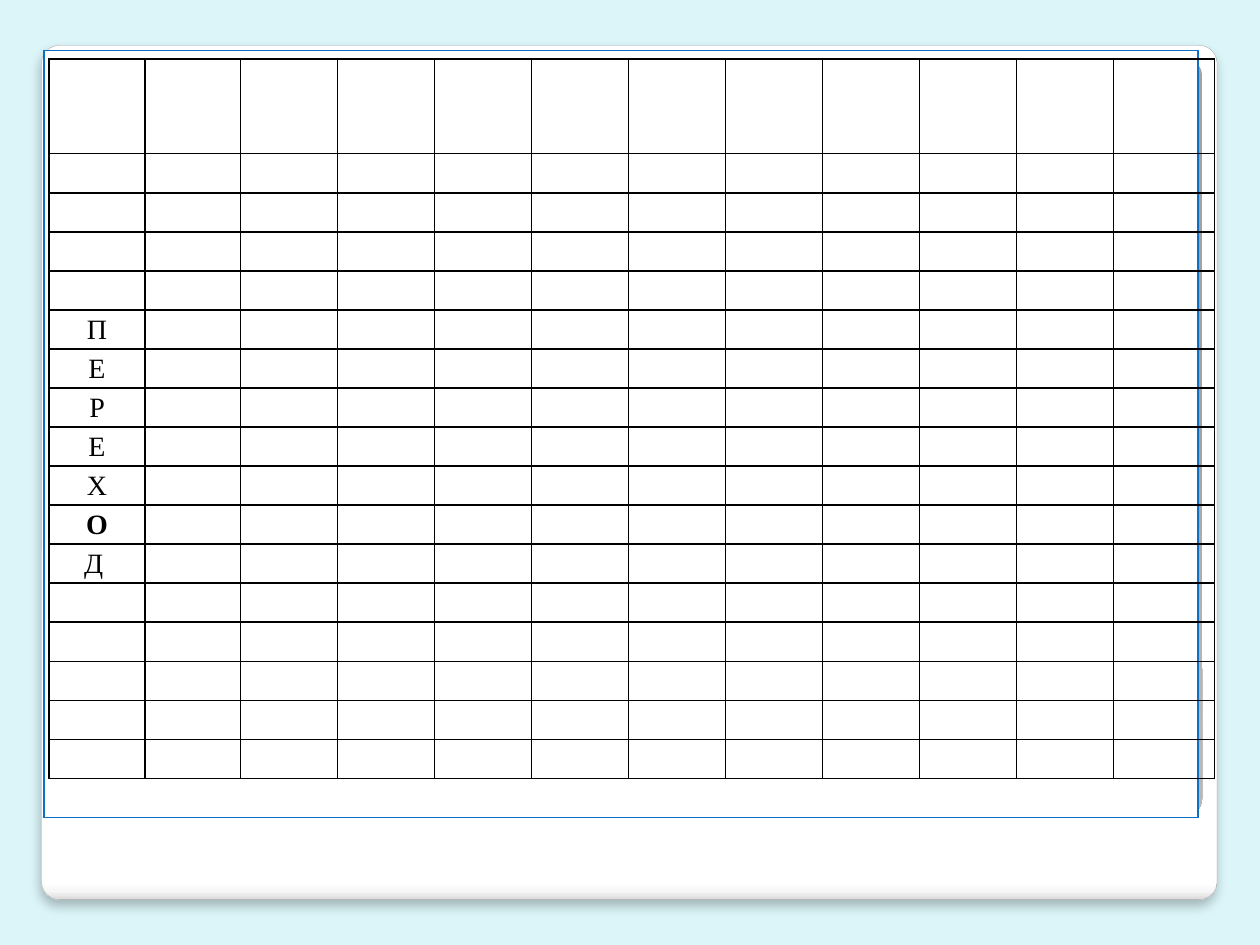
from lxml import etree
from pptx import Presentation
from pptx.dml.color import RGBColor
from pptx.enum import shapes, text
from pptx.oxml import parse_xml
from pptx.oxml.ns import nsdecls, qn
from pptx.util import Inches, Pt

PALE_CYAN = RGBColor(0xDB, 0xF5, 0xF9)
WHITE = RGBColor(0xFF, 0xFF, 0xFF)
GRAY = RGBColor(0xA4, 0xA4, 0xA4)
BLUE = RGBColor(0x0F, 0x6F, 0xC6)
BLACK = RGBColor(0, 0, 0)


def add_panel(slide, left, top, width, height, stops, direction):
    """Add a rounded panel with a gradient of (percent, colour) stops."""
    panel = slide.shapes.add_shape(
        shapes.MSO_SHAPE.ROUNDED_RECTANGLE,
        Inches(left), Inches(top), Inches(width), Inches(height))
    panel.adjustments[0] = 0.021
    panel.shadow.inherit = False
    panel.line.fill.background()
    stop_xml = "".join(
        f'<a:gs pos="{position * 1000}"><a:srgbClr val="{color}"/></a:gs>'
        for position, color in stops)
    gradient = parse_xml(
        f'<a:gradFill {nsdecls("a")} rotWithShape="1">'
        f'<a:gsLst>{stop_xml}</a:gsLst>{direction}</a:gradFill>')
    panel._element.spPr.find(qn("a:prstGeom")).addnext(gradient)
    return panel


def add_grid(slide, left, top, columns, rows, border):
    """Add a plain table with 1 pt borders and no cell fill."""
    table = slide.shapes.add_table(
        len(rows), len(columns), Inches(left), Inches(top),
        Inches(sum(columns)), Inches(sum(rows))).table
    table.first_row = table.horz_banding = False
    for column, width in zip(table.columns, columns):
        column.width = Inches(width)
    for row, height in zip(table.rows, rows):
        row.height = Inches(height)
    for cell in table.iter_cells():
        cell.margin_left = cell.margin_right = Inches(0.07)
        cell.margin_top = cell.margin_bottom = 0
        properties = cell._tc.get_or_add_tcPr()
        for side in ("lnL", "lnR", "lnT", "lnB"):
            line = etree.SubElement(properties, qn(f"a:{side}"), w=str(Pt(1)))
            fill = etree.SubElement(line, qn("a:solidFill"))
            etree.SubElement(fill, qn("a:srgbClr"), val=str(border))
        cell.fill.background()
    return table


presentation = Presentation()
presentation.slide_width = Inches(10)
presentation.slide_height = Inches(7.5)
slide = presentation.slides.add_slide(presentation.slide_layouts[6])
slide.background.fill.solid()
slide.background.fill.fore_color.rgb = PALE_CYAN

# White card with a soft shadow
card = add_panel(
    slide, 0.33, 0.36, 9.33, 6.78,
    [(0, "FFFFFF"), (98, "FFFFFF"), (99, "F7F7F7"), (100, "DADADA")],
    '<a:lin ang="5400000" scaled="0"/>')
card.line.color.rgb = GRAY
card.line.width = Pt(0.16)
card._element.spPr.find(qn("a:effectLst")).append(parse_xml(
    f'<a:outerShdw {nsdecls("a")} blurRad="{Pt(6)}" dist="{Pt(4)}" '
    'dir="5400000" algn="t" rotWithShape="0">'
    '<a:srgbClr val="000000"><a:alpha val="25000"/></a:srgbClr></a:outerShdw>'))

# Gray inner panel
add_panel(
    slide, 0.46, 0.47, 9.08, 6,
    [(0, "FFFFFF"), (55, "E1E1E1"), (100, "A2A2A2")],
    '<a:path path="circle">'
    '<a:fillToRect l="50000" t="175000" r="50000" b="-75000"/></a:path>')

# White frame behind the crossword
frame = add_grid(slide, 0.35, 0.4, [9.16], [6.09], BLUE)
frame.cell(0, 0).fill.solid()
frame.cell(0, 0).fill.fore_color.rgb = WHITE

# Crossword grid with the key word down the first column
crossword = add_grid(
    slide, 0.39, 0.47, [0.76] * 2 + [0.77] * 9 + [0.8],
    [0.75] + [0.31] * 16, BLACK)
for row, letter in enumerate(["П", "Е", "Р", "Е", "Х", "О", "Д "], start=5):
    paragraph = crossword.cell(row, 0).text_frame.paragraphs[0]
    paragraph.text = letter
    paragraph.alignment = text.PP_ALIGN.CENTER
    paragraph.line_spacing = 1.15
    paragraph.font.name = "Times New Roman"
    paragraph.font.size = Pt(16)
    paragraph.font.bold = letter == "О"
    paragraph.font.color.rgb = BLACK

presentation.save("out.pptx")
